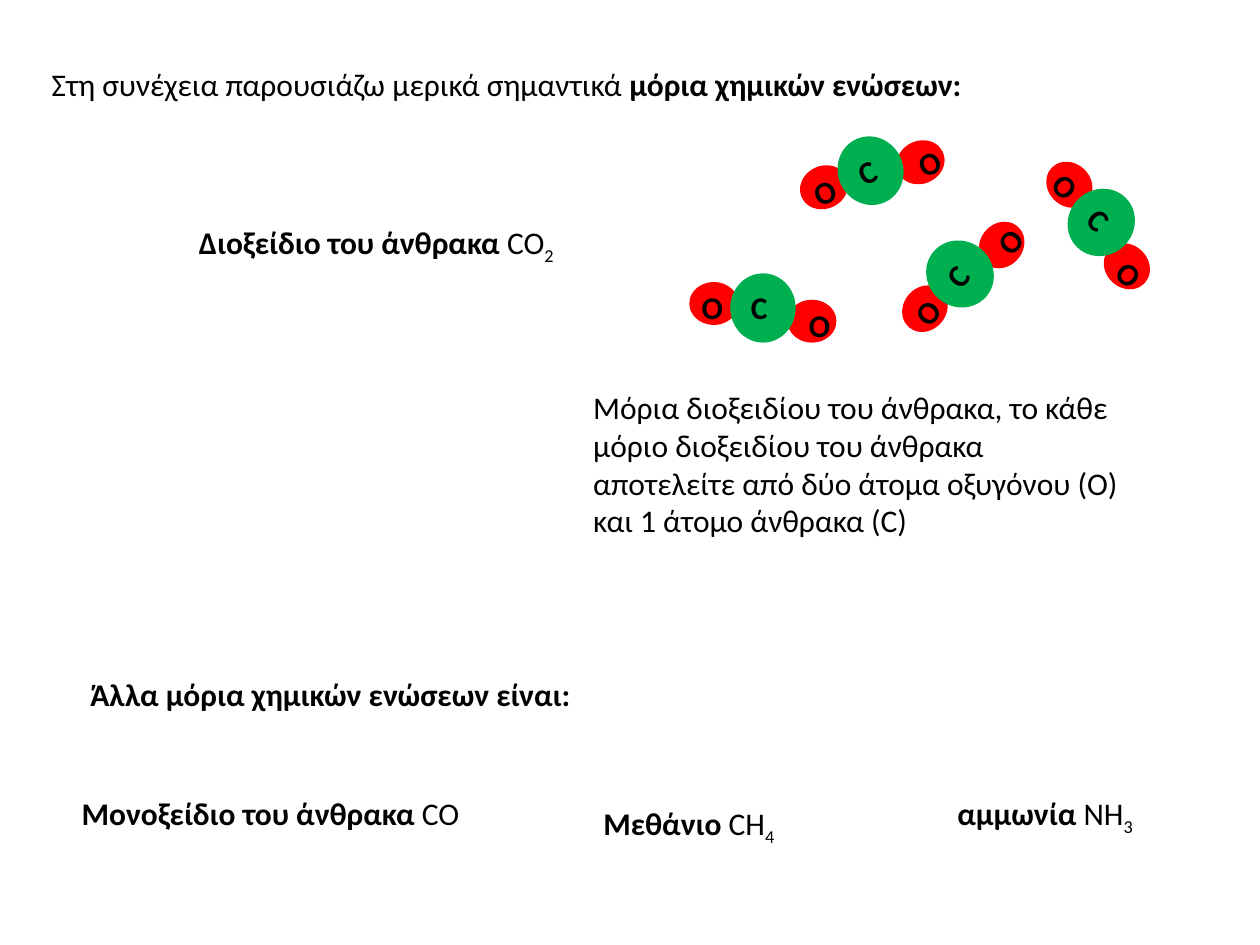
"""Build a slide about molecules of chemical compounds."""
from dataclasses import dataclass

from pptx import Presentation
from pptx.dml.color import RGBColor
from pptx.enum.shapes import MSO_SHAPE
from pptx.enum.text import MSO_ANCHOR, MSO_AUTO_SIZE, PP_ALIGN
from pptx.util import Pt

OVAL = MSO_SHAPE.OVAL
TOP = MSO_ANCHOR.TOP
GROW = MSO_AUTO_SIZE.SHAPE_TO_FIT_TEXT
LEFT = PP_ALIGN.LEFT

PLAIN, BOLD, SUBSCRIPT = "plain", "bold", "subscript"


@dataclass(frozen=True)
class Theme:
    font: str = "Calibri"
    size: float = 18
    text: RGBColor = RGBColor(0x00, 0x00, 0x00)
    oxygen: RGBColor = RGBColor(0xFF, 0x00, 0x00)
    carbon: RGBColor = RGBColor(0x00, 0xB0, 0x50)


class SlideBuilder:
    def __init__(self, page, theme):
        self.page = page
        self.theme = theme

    def fill_text(self, box, runs, wrap):
        frame = box.text_frame
        frame.word_wrap = wrap
        frame.auto_size = GROW
        frame.vertical_anchor = TOP
        para = frame.paragraphs[0]
        para.alignment = LEFT
        for text, style in runs:
            span = para.add_run()
            span.text = text
            font = span.font
            font.name = self.theme.font
            font.size = Pt(self.theme.size)
            font.color.rgb = self.theme.text
            font.bold = style == BOLD
            if style == SUBSCRIPT:
                span._r.get_or_add_rPr().set("baseline", "-25000")

    def title(self, left, top, width, height, runs):
        box = self.page.shapes.title
        box.left, box.top = Pt(left), Pt(top)
        box.width, box.height = Pt(width), Pt(height)
        self.fill_text(box, runs, True)

    def text(self, left, top, width, height, runs, wrap=False, shapes=None):
        shapes = shapes or self.page.shapes
        box = shapes.add_textbox(Pt(left), Pt(top), Pt(width), Pt(height))
        self.fill_text(box, runs, wrap)

    def atom(self, shapes, left, top, width, height, color):
        ball = shapes.add_shape(OVAL, Pt(left), Pt(top), Pt(width), Pt(height))
        ball.shadow.inherit = False
        ball.fill.solid()
        ball.fill.fore_color.rgb = color
        ball.line.fill.background()

    def carbon_dioxide(self, x, y, angle):
        group = self.page.shapes.add_group_shape()
        shapes = group.shapes
        for left, top in ((14, -4.7), (-42.1, -14.8)):
            self.atom(shapes, x + left, y + top, 28, 24.5, self.theme.oxygen)
        self.atom(shapes, x - 18.7, y - 19.8, 37.4, 39.6, self.theme.carbon)
        for letter, left, top, width, wrap in (
            ("Ο", 19.1, -4.7, 22.3, False),
            ("Ο", -42.1, -14.8, 22.3, False),
            ("C", -14, -14.8, 23.8, True),
        ):
            self.text(x + left, y + top, width, 24.5, [(letter, BOLD)], wrap, shapes)
        group.rotation = angle


def main():
    deck = Presentation()
    deck.slide_width, deck.slide_height = Pt(720), Pt(540)
    title_only = deck.slide_layouts[5]
    builder = SlideBuilder(deck.slides.add_slide(title_only), Theme())

    builder.title(22.3, 33.8, 551.5, 28.8, [
        ("Στη συνέχεια παρουσιάζω μερικά σημαντικά ", PLAIN),
        ("μόρια χημικών ενώσεων:", BOLD),
    ])
    builder.text(106.6, 123.8, 228.2, 28.8, [
        ("Διοξείδιο του άνθρακα ", BOLD), ("CO", PLAIN), ("2", SUBSCRIPT),
    ])
    builder.text(331.9, 218.2, 320.4, 94.3, [
        ("Μόρια διοξειδίου του άνθρακα, το κάθε μόριο διοξειδίου του άνθρακα "
         "αποτελείτε από δύο άτομα οξυγόνου (Ο) και 1 άτομο άνθρακα (C)", PLAIN),
    ], wrap=True)

    for x, y, angle in (
        (497.5, 97.6, 335.3),
        (548.6, 156.6, 310.1),
        (629.3, 127.1, 44.6),
        (436, 176, 0),
    ):
        builder.carbon_dioxide(x, y, angle)

    builder.text(44.6, 382.3, 291.6, 28.8, [
        ("Άλλα μόρια χημικών ενώσεων είναι:", BOLD),
    ])
    for left, top, width, name, formula, count in (
        (39.6, 450, 232.6, "Μονοξείδιο του άνθρακα ", "CO", ""),
        (337.7, 455.8, 113.8, "Μεθάνιο ", "CH", "4"),
        (540, 450, 116.6, "αμμωνία ", "NH", "3"),
    ):
        runs = [(name, BOLD), (formula, PLAIN)]
        if count:
            runs.append((count, SUBSCRIPT))
        builder.text(left, top, width, 28.8, runs)

    deck.save("out.pptx")


if __name__ == "__main__":
    main()
